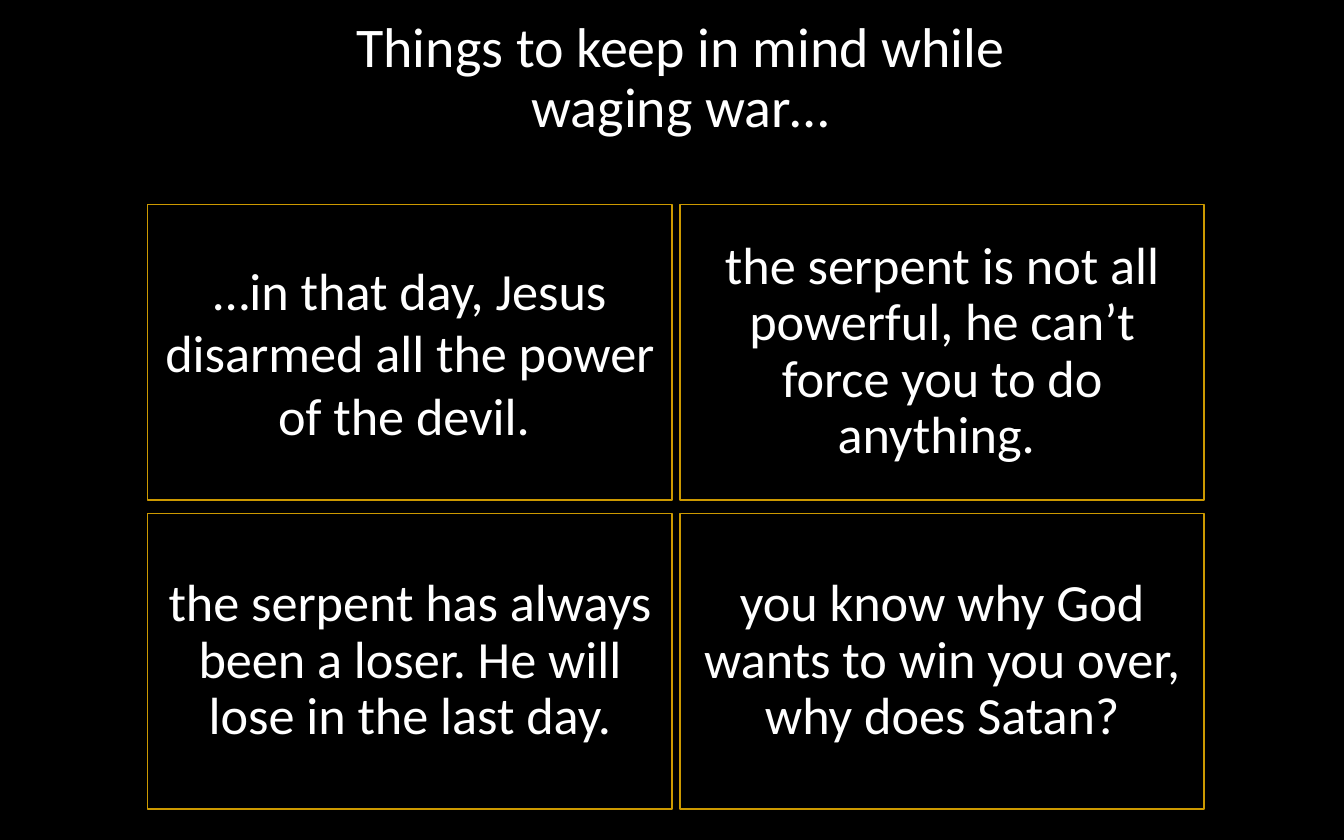
from collections import namedtuple
from dataclasses import dataclass

from pptx import Presentation
from pptx.dml.color import RGBColor
from pptx.enum import shapes, text
from pptx.util import Emu, Pt

SCALE = 9144
Box = namedtuple("Box", "x y w h")


@dataclass(frozen=True)
class Theme:
    back: str = "000000"
    ink: str = "FFFFFF"
    gold: str = "CC9900"
    font: str = "Calibri"
    head: int = 30
    body: int = 28
    line: float = 0.75


THEME = Theme()
TITLE = "Things to keep in mind while waging war…"
CARDS = [
    ("…in that day, Jesus disarmed all the power of the devil. ", 1.0, 10),
    ("the serpent is not all powerful, he can’t force you to do anything. ", 0.9, 5),
    ("the serpent has always been a loser. He will lose in the last day.", 0.9, 5),
    ("you know why God wants to win you over, why does Satan?", 0.9, 5),
]


def px(count):
    return Emu(count * SCALE)


def color(code):
    return RGBColor.from_string(code)


def write(shape, words, size, space=1.0, side=10, edge=5):
    frame = shape.text_frame
    frame.word_wrap = True
    frame.auto_size = text.MSO_AUTO_SIZE.NONE
    frame.vertical_anchor = text.MSO_ANCHOR.MIDDLE
    frame.margin_left = frame.margin_right = px(side)
    frame.margin_top = frame.margin_bottom = px(edge)
    para = frame.paragraphs[0]
    para.alignment = text.PP_ALIGN.CENTER
    para.line_spacing = space
    para.space_before = Pt(0)
    run = para.add_run()
    run.text = words
    run.font.name = THEME.font
    run.font.size = Pt(size)
    run.font.color.rgb = color(THEME.ink)


def head(slide, box):
    title = slide.shapes.title
    title.left, title.top, title.width, title.height = map(px, box)
    write(title, TITLE, THEME.head, space=0.9, edge=10)


def card(slide, box, words, space, edge):
    rect = slide.shapes.add_shape(shapes.MSO_SHAPE.RECTANGLE, *map(px, box))
    rect.shadow.inherit = False
    rect.fill.background()
    rect.line.color.rgb = color(THEME.gold)
    rect.line.width = Pt(THEME.line)
    write(rect, words, THEME.body, space=space, edge=edge)


def grid(slide, box, cols=2, rows=2, gap=(6, 10)):
    wide = (box.w - gap[0] * (cols - 1)) // cols
    high = (box.h - gap[1] * (rows - 1)) // rows
    for index, (words, space, edge) in enumerate(CARDS):
        row, col = divmod(index, cols)
        cell = Box(box.x + col * (wide + gap[0]), box.y + row * (high + gap[1]), wide, high)
        card(slide, cell, words, space, edge)


def main():
    deck = Presentation()
    deck.slide_width, deck.slide_height = px(1000), px(625)
    slide = deck.slides.add_slide(deck.slide_layouts[5])
    slide.background.fill.solid()
    slide.background.fill.fore_color.rgb = color(THEME.back)
    head(slide, Box(218, 6, 577, 106))
    grid(slide, Box(110, 152, 786, 450))
    deck.save("out.pptx")


if __name__ == "__main__":
    main()
